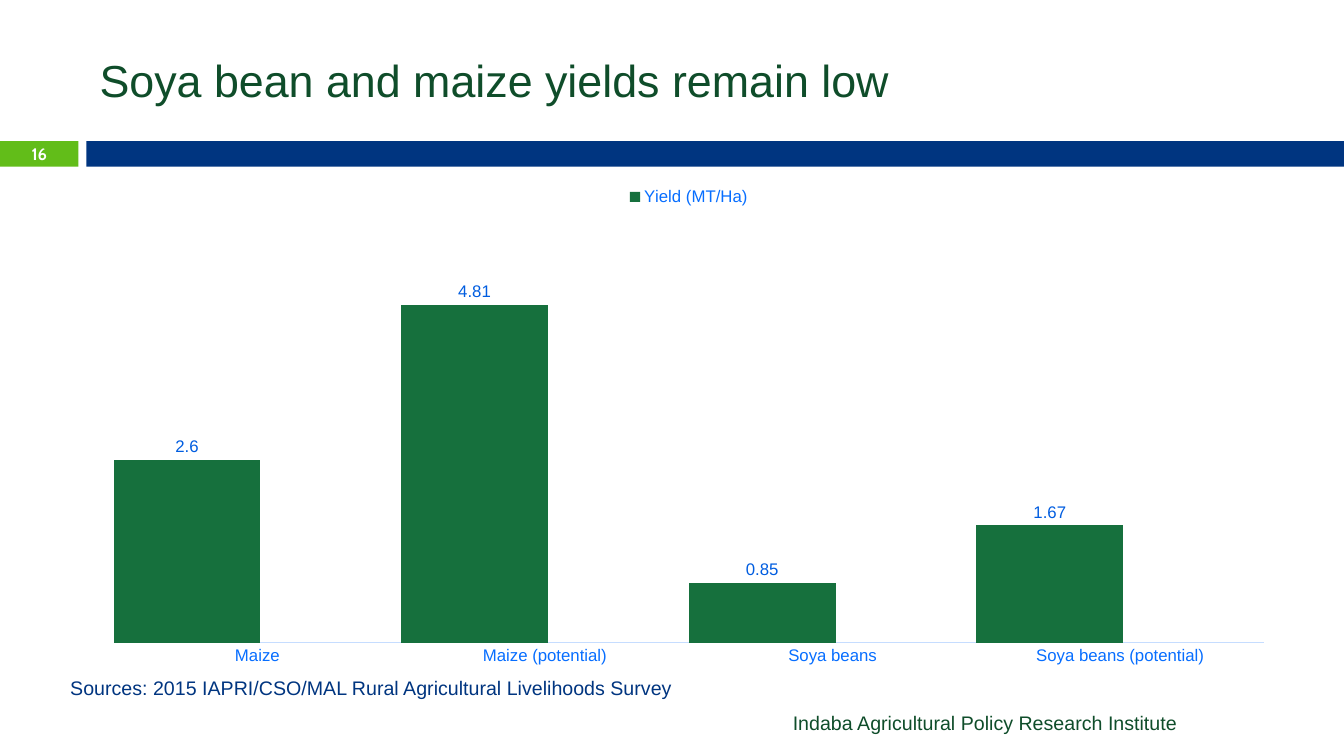
"""Build the slide on soya bean and maize yields."""
import dataclasses

import lxml.etree
import pptx
import pptx.chart.data
import pptx.dml.color
import pptx.enum.chart
import pptx.enum.shapes
import pptx.enum.text
import pptx.oxml
import pptx.oxml.ns
import pptx.util

Cm = pptx.util.Cm


@dataclasses.dataclass(frozen=True)
class Theme:
    font: str = "Arial"
    number_font: str = "Cabin"
    title_color: str = "0F4D2A"
    navy: str = "003580"
    lime: str = "62BD19"
    bar_green: str = "16703D"
    olive: str = "A5AB81"
    label_blue: str = "005DE0"
    axis_blue: str = "076EFF"
    axis_line: str = "C6DDFF"
    white: str = "FFFFFF"
    title_size: float = 32
    note_size: float = 14
    chart_size: float = 12
    number_size: float = 11.9


theme = Theme()
Align = pptx.enum.text.PP_ALIGN
Anchor = pptx.enum.text.MSO_ANCHOR


def rgb(color):
    return pptx.dml.color.RGBColor.from_string(color)


def set_font(font, size, color, name=theme.font, bold=False):
    font.name = name
    font.size = pptx.util.Pt(size)
    font.bold = bold
    font.color.rgb = rgb(color)


deck = pptx.Presentation()
deck.slide_width, deck.slide_height = Cm(33.87), Cm(19.05)
page = deck.slides.add_slide(deck.slide_layouts[6])

for left, width, color in [(0, 1.98, theme.lime), (2.18, 31.69, theme.navy)]:
    band = page.shapes.add_shape(
        pptx.enum.shapes.MSO_SHAPE.RECTANGLE, Cm(left), Cm(3.56), Cm(width), Cm(0.64)
    )
    band.shadow.inherit = False
    band.fill.solid()
    band.fill.fore_color.rgb = rgb(color)
    band.line.fill.background()

texts = [
    ("Indaba Agricultural Policy Research Institute", (15.52, 17.78, 14.4, 0.86),
     Align.RIGHT, Anchor.TOP, (theme.note_size, theme.title_color)),
    ("Soya bean and maize yields remain low", (2.26, 0.64, 30.2, 2.74),
     Align.LEFT, Anchor.MIDDLE, (theme.title_size, theme.title_color)),
    ("16", (0, 3.53, 1.98, 0.69), Align.CENTER, Anchor.MIDDLE,
     (theme.number_size, theme.white, theme.number_font, True)),
    ("Sources: 2015 IAPRI/CSO/MAL Rural Agricultural Livelihoods Survey",
     (1.52, 16.92, 28.4, 0.86), Align.LEFT, Anchor.TOP, (theme.note_size, theme.navy)),
]
for words, place, align, anchor, style in texts:
    box = page.shapes.add_textbox(*map(Cm, place))
    box.text_frame.word_wrap = True
    box.text_frame.vertical_anchor = anchor
    para = box.text_frame.paragraphs[0]
    para.text = words
    para.alignment = align
    set_font(para.font, *style)

data = pptx.chart.data.CategoryChartData()
data.categories = ["Maize", "Maize (potential)", "Soya beans", "Soya beans (potential)"]
data.add_series("Yield (MT/Ha)", [2.6, 4.81, 0.85, 1.67])
for name in ["Series 2", "Series 3"]:
    data.add_series(name, [None] * 4)
chart = page.shapes.add_chart(
    pptx.enum.chart.XL_CHART_TYPE.COLUMN_CLUSTERED,
    Cm(2.26), Cm(4.45), Cm(30.2), Cm(12.5), data
).chart
chart.has_title = False
set_font(chart.font, theme.chart_size, theme.axis_blue)

plot = chart.plots[0]
plot.vary_by_categories = False
plot.gap_width = 0
plot.overlap = 52
for series, color in zip(plot.series, [theme.bar_green, theme.lime, theme.olive]):
    series.format.fill.solid()
    series.format.fill.fore_color.rgb = rgb(color)
    labels = series.data_labels
    labels.show_value = True
    labels.position = pptx.enum.chart.XL_LABEL_POSITION.OUTSIDE_END
    set_font(labels.font, theme.chart_size, theme.label_blue)

category_axis = chart.category_axis
category_axis.major_tick_mark = pptx.enum.chart.XL_TICK_MARK.NONE
category_axis.format.line.color.rgb = rgb(theme.axis_line)
category_axis.format.line.width = pptx.util.Pt(0.75)
set_font(category_axis.tick_labels.font, theme.chart_size, theme.axis_blue)
value_axis = chart.value_axis
value_axis.visible = False
value_axis.has_major_gridlines = False
value_axis.minimum_scale, value_axis.maximum_scale = 0, 6

chart.has_legend = True
legend = chart.legend
legend.position = pptx.enum.chart.XL_LEGEND_POSITION.TOP
legend.include_in_layout = False
set_font(legend.font, theme.chart_size, theme.axis_blue)
qn = pptx.oxml.ns.qn
legend_position = legend._element.find(qn("c:legendPos"))
for index in [2, 1]:
    entry = lxml.etree.Element(qn("c:legendEntry"))
    lxml.etree.SubElement(entry, qn("c:idx")).set("val", str(index))
    lxml.etree.SubElement(entry, qn("c:delete")).set("val", "1")
    legend_position.addnext(entry)

plot_area = chart._chartSpace.chart.plotArea
for old_layout in plot_area.findall(qn("c:layout")):
    plot_area.remove(old_layout)
layout = lxml.etree.Element(qn("c:layout"))
manual = lxml.etree.SubElement(layout, qn("c:manualLayout"))
for tag, value in [("layoutTarget", "inner"), ("xMode", "edge"), ("yMode", "edge"),
                   ("x", "0.02"), ("y", "0.09"), ("w", "0.96"), ("h", "0.85")]:
    lxml.etree.SubElement(manual, qn(f"c:{tag}")).set("val", value)
plot_area.insert(0, layout)

deck.save("out.pptx")
